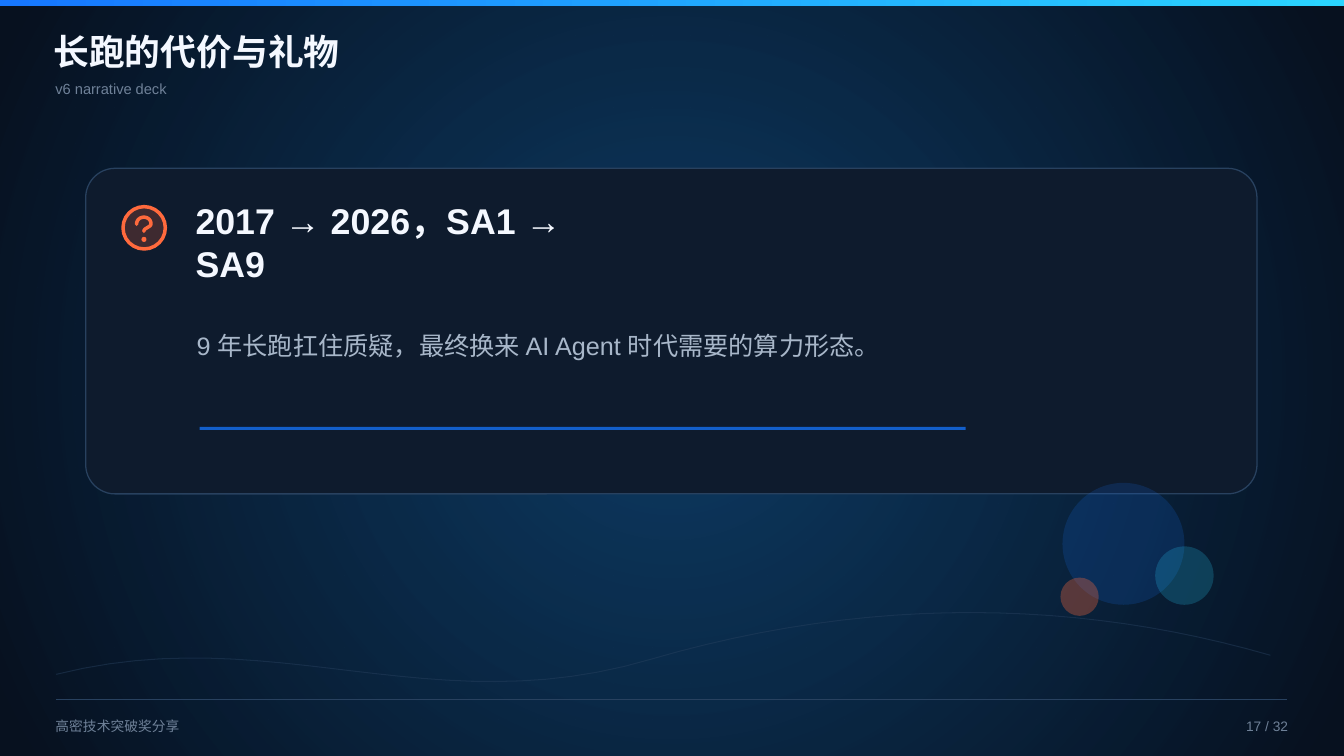
from dataclasses import dataclass

import pptx
import pptx.dml.color
import pptx.enum.shapes
import pptx.enum.text
import pptx.oxml
import pptx.oxml.ns
import pptx.util

Color = pptx.dml.color.RGBColor
Kind = pptx.enum.shapes.MSO_SHAPE
Align = pptx.enum.text.PP_ALIGN
Point = tuple[float, float]
Area = tuple[float, float, float, float]

# Square grid cells: ten columns or rows to the inch
CELL = pptx.util.Inches(0.1)
COLUMNS, ROWS = 133.33, 75
FULL_PAGE = (0, 0, COLUMNS, ROWS)

NIGHT = Color(0x07, 0x11, 0x1F)
PANEL = Color(0x0E, 0x1B, 0x2D)
EDGE = Color(0x28, 0x41, 0x5F)
BLUE = Color(0x16, 0x77, 0xFF)
CYAN = Color(0x2A, 0xD4, 0xFF)
ORANGE = Color(0xFF, 0x6A, 0x3D)
WHITE = Color(0xF4, 0xF8, 0xFF)
SILVER = Color(0xA8, 0xB7, 0xC9)
GRAY = Color(0x6F, 0x81, 0x98)

FONT = "Arial"
NAMESPACE = pptx.oxml.ns.nsdecls("a")
CURVE_STEPS = 24


@dataclass(frozen=True)
class Label:
    area: Area
    text: str
    size: float
    color: Color
    bold: bool = False
    align: Align = Align.LEFT


@dataclass(frozen=True)
class Disc:
    area: Area
    color: Color
    opacity: int


@dataclass(frozen=True)
class Rule:
    left: float
    right: float
    row: float
    color: Color
    width: float
    opacity: int = 100


LABELS = (
    Label((5.3, 3, 31.9, 5.7), "长跑的代价与礼物", 25.5, WHITE, bold=True),
    Label((5.5, 7.9, 13.5, 2.3), "v6 narrative deck", 10.5, GRAY),
    Label((19.4, 19.7, 43.7, 5.7), "2017 → 2026，SA1 → SA9", 25.5, WHITE, bold=True),
    Label((19.5, 32.8, 72.3, 4), "9 年长跑扛住质疑，最终换来 AI Agent 时代需要的算力形态。", 18, SILVER),
    Label((5.5, 71.2, 13.1, 2.2), "高密技术突破奖分享", 9.8, GRAY),
    Label((122.8, 71.2, 5, 2.2), "17 / 32", 9.8, GRAY, align=Align.RIGHT),
)
DISCS = (
    Disc((105.4, 47.9, 12.1, 12.1), BLUE, 16),
    Disc((114.6, 54.2, 5.8, 5.8), CYAN, 20),
    Disc((105.2, 57.3, 3.8, 3.8), ORANGE, 32),
)
RULES = (
    Rule(19.8, 95.8, 42.5, BLUE, 2.25, 75),
    Rule(5.6, 127.7, 69.4, EDGE, 0.75),
)
# A start point, then two handles and an end point for each curve
WAVE = [(5.6, 66.9), (27.1, 61.5), (42.7, 71.9), (64.6, 65.4),
        (86.5, 59), (107.3, 59.6), (126, 65)]
QUESTION_HOOK = [(13.55, 22.25), (13.55, 21.85), (13.85, 21.55), (14.28, 21.55),
                 (14.68, 21.55), (14.98, 21.85), (14.98, 22.2),
                 (14.98, 22.55), (14.28, 22.6), (14.28, 22.95)]


def cells(*counts: float) -> list[int]:
    return [round(count * CELL) for count in counts]


def fade(holder, opacities: list[int]) -> None:
    """Give each colour inside the holder element its opacity in percent."""
    colors = holder.iter(pptx.oxml.ns.qn("a:srgbClr"))
    for color, opacity in zip(colors, opacities):
        if opacity < 100:
            color.append(pptx.oxml.parse_xml(
                f'<a:alpha {NAMESPACE} val="{opacity * 1000}"/>'))


def add_block(page, kind: Kind, area: Area, color: Color, opacity: int = 100):
    shape = page.shapes.add_shape(kind, *cells(*area))
    shape.shadow.inherit = False
    shape.line.fill.background()
    shape.fill.solid()
    shape.fill.fore_color.rgb = color
    fade(shape.element.spPr, [opacity])
    return shape


def add_gradient(page, area: Area, start: Color, end: Color):
    shape = add_block(page, Kind.RECTANGLE, area, start)
    shape.fill.gradient()
    shape.fill.gradient_angle = 0
    for stop, color in zip(shape.fill.gradient_stops, (start, end)):
        stop.color.rgb = color
    return shape


def add_glow(page, color: Color, opacity: int) -> None:
    """Cover the page with a colour that fades out from the centre."""
    properties = add_gradient(page, FULL_PAGE, color, color).element.spPr
    fade(properties, [opacity, 0])
    linear = properties.find(".//" + pptx.oxml.ns.qn("a:lin"))
    linear.getparent().replace(linear, pptx.oxml.parse_xml(
        f'<a:path {NAMESPACE} path="circle">'
        '<a:fillToRect l="50000" t="50000" r="50000" b="50000"/></a:path>'))


def set_line(shape, color: Color, width: float, opacity: int = 100) -> None:
    shape.line.color.rgb = color
    shape.line.width = pptx.util.Pt(width)
    fade(shape.element.spPr.find(pptx.oxml.ns.qn("a:ln")), [opacity])


def curve_point(corners: list[Point], share: float) -> Point:
    rest = 1 - share
    weights = (rest ** 3, 3 * rest ** 2 * share, 3 * rest * share ** 2, share ** 3)
    x, y = (sum(weight * value for weight, value in zip(weights, axis))
            for axis in zip(*corners))
    return x, y


def add_curve(page, points: list[Point], color: Color, width: float, opacity: int = 100) -> None:
    track = [curve_point(points[first:first + 4], step / CURVE_STEPS)
             for first in range(0, len(points) - 1, 3)
             for step in range(1, CURVE_STEPS + 1)]
    builder = page.shapes.build_freeform(*cells(*points[0]))
    builder.add_line_segments([cells(*point) for point in track], close=False)
    shape = builder.convert_to_shape()
    shape.shadow.inherit = False
    shape.fill.background()
    set_line(shape, color, width, opacity)
    shape.element.spPr.find(pptx.oxml.ns.qn("a:ln")).set("cap", "rnd")


def add_rule(page, rule: Rule) -> None:
    line = page.shapes.add_connector(
        pptx.enum.shapes.MSO_CONNECTOR.STRAIGHT,
        *cells(rule.left, rule.row, rule.right, rule.row))
    set_line(line, rule.color, rule.width, rule.opacity)
    line.element.spPr.append(pptx.oxml.parse_xml(f"<a:effectLst {NAMESPACE}/>"))


def add_label(page, label: Label) -> None:
    frame = page.shapes.add_textbox(*cells(*label.area)).text_frame
    frame.word_wrap = True
    frame.margin_left = frame.margin_right = frame.margin_top = frame.margin_bottom = 0
    frame.text = label.text
    para = frame.paragraphs[0]
    para.alignment = label.align
    font = para.runs[0].font
    font.name = FONT
    font.size = pptx.util.Pt(label.size)
    font.bold = label.bold
    font.color.rgb = label.color


def add_question_icon(page) -> None:
    ring = add_block(page, Kind.OVAL, (12.2, 20.5, 4.2, 4.2), ORANGE, 20)
    set_line(ring, ORANGE, 2.5)
    add_curve(page, QUESTION_HOOK, ORANGE, 2.5)
    add_block(page, Kind.OVAL, (14.03, 23.5, 0.5, 0.5), ORANGE)


def main() -> None:
    deck = pptx.Presentation()
    deck.slide_width, deck.slide_height = cells(COLUMNS, ROWS)
    page = deck.slides.add_slide(deck.slide_layouts[6])

    add_block(page, Kind.RECTANGLE, FULL_PAGE, NIGHT)
    add_glow(page, BLUE, 22)
    add_glow(page, CYAN, 12)
    add_curve(page, WAVE, EDGE, 0.75, 45)
    add_gradient(page, (0, 0, COLUMNS, 0.6), BLUE, CYAN)

    panel = add_block(page, Kind.ROUNDED_RECTANGLE, (8.5, 16.7, 116.2, 32.3), PANEL)
    panel.adjustments[0] = 0.09
    set_line(panel, EDGE, 0.9)
    add_question_icon(page)

    for disc in DISCS:
        add_block(page, Kind.OVAL, disc.area, disc.color, disc.opacity)
    for rule in RULES:
        add_rule(page, rule)
    for label in LABELS:
        add_label(page, label)
    deck.save("out.pptx")


if __name__ == "__main__":
    main()
